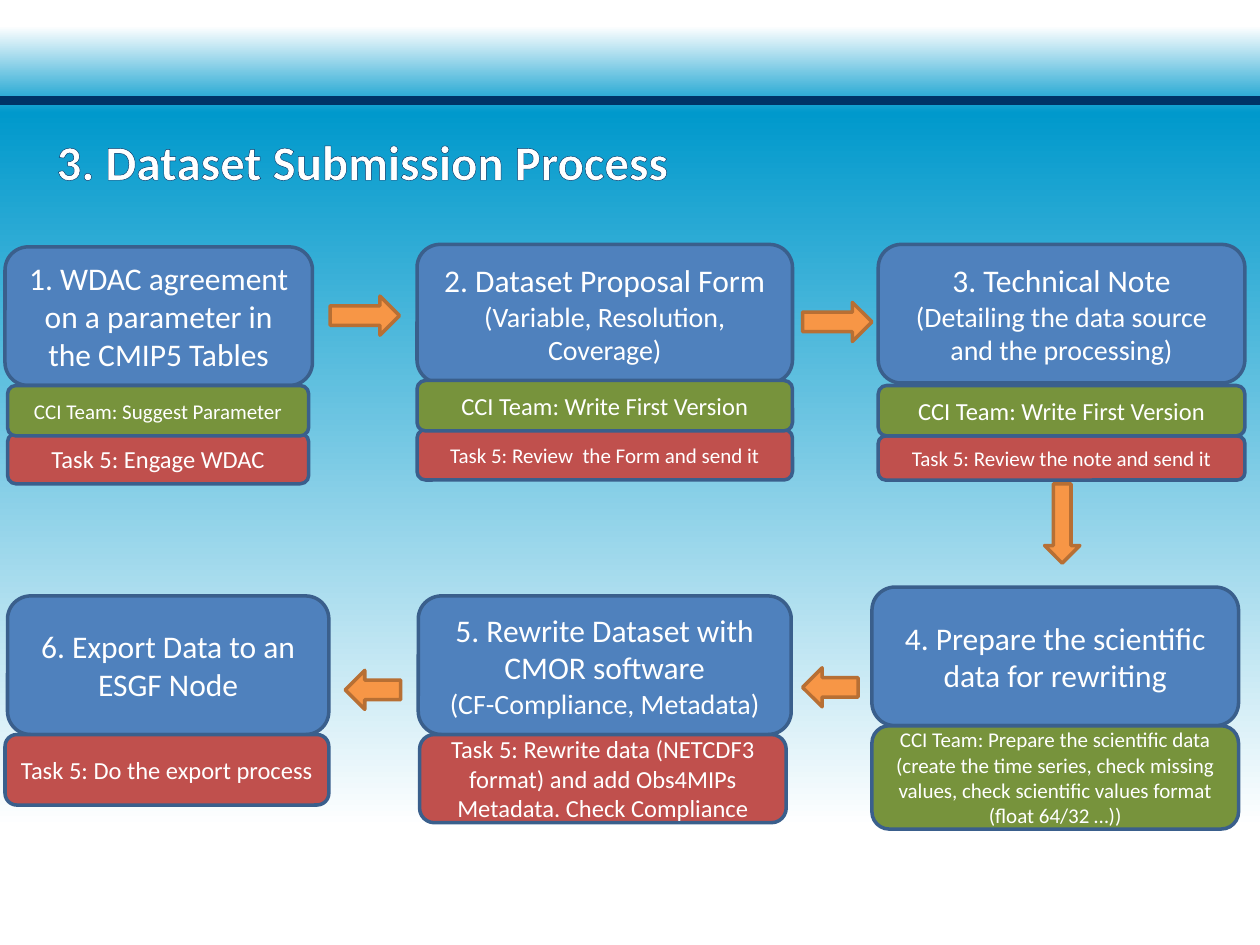
from copy import deepcopy
from dataclasses import dataclass

from lxml import etree
from pptx import Presentation
from pptx.dml.color import RGBColor
from pptx.enum.shapes import MSO_SHAPE
from pptx.enum.text import MSO_ANCHOR, PP_ALIGN
from pptx.oxml.ns import qn
from pptx.util import Inches, Pt

RECT, ROUND = MSO_SHAPE.RECTANGLE, MSO_SHAPE.ROUNDED_RECTANGLE
RIGHT, DOWN = MSO_SHAPE.RIGHT_ARROW, MSO_SHAPE.DOWN_ARROW
CENTER, MIDDLE = PP_ALIGN.CENTER, MSO_ANCHOR.MIDDLE

WHITE = RGBColor(0xFF, 0xFF, 0xFF)
SKY = RGBColor(0x00, 0x99, 0xCC)
NAVY = RGBColor(0x00, 0x33, 0x66)
BLUE = RGBColor(0x4F, 0x81, 0xBD)
BORDER = RGBColor(0x3A, 0x5F, 0x8C)
GREEN = RGBColor(0x77, 0x93, 0x3C)
RED = RGBColor(0xC0, 0x50, 0x4D)
ORANGE = RGBColor(0xF7, 0x96, 0x46)
RUST = RGBColor(0xB7, 0x6F, 0x34)

SKY_STOPS = [(0, WHITE), (5, WHITE), (88, SKY), (98, WHITE)]


@dataclass
class Task:
    """A coloured strip under a step."""
    text: str
    fill: RGBColor
    size: int
    top: float
    height: float = 0.4


@dataclass
class Step:
    """A process step with its tasks, listed back to front."""
    title: str
    left: float
    top: float
    width: float
    tasks: list[Task]
    task_left: float
    task_width: float
    detail: str = ""


@dataclass
class Arrow:
    """A block arrow between two steps."""
    left: float
    top: float
    width: float
    height: float = 0.31
    kind: int = RIGHT
    rotation: int = 0


STEPS = [
    Step("1. WDAC agreement on a parameter in the CMIP5 Tables", 0.04, 1.96, 2.44,
         [Task("Task 5: Engage WDAC", RED, 14, 3.44),
          Task("CCI Team: Suggest Parameter", GREEN, 12, 3.06)], 0.06, 2.39),
    Step("2. Dataset Proposal Form", 3.31, 1.94, 2.98,
         [Task("Task 5: Review  the Form and send it", RED, 12, 3.41),
          Task("CCI Team: Write First Version", GREEN, 14, 3.02)], 3.31, 2.98,
         "(Variable, Resolution, Coverage)"),
    Step("3. Technical Note", 6.97, 1.94, 2.91,
         [Task("Task 5: Review the note and send it", RED, 12, 3.46, 0.35),
          Task("CCI Team: Write First Version", GREEN, 14, 3.06)], 6.97, 2.91,
         "(Detailing the data source and the processing)"),
    Step("4. Prepare the scientific data for rewriting", 6.92, 4.66, 2.91,
         [Task("CCI Team: Prepare the scientific data (create the time series, "
               "check missing values, check scientific values format "
               "(float 64/32 …))", GREEN, 12, 5.76, 0.82)], 6.92, 2.91),
    Step("5. Rewrite Dataset with CMOR software", 3.32, 4.73, 2.96,
         [Task("Task 5: Rewrite data (NETCDF3 format) and add Obs4MIPs Metadata. "
               "Check Compliance", RED, 14, 5.83, 0.7)], 3.33, 2.91,
         "(CF-Compliance, Metadata)"),
    Step("6. Export Data to an ESGF Node", 0.06, 4.73, 2.55,
         [Task("Task 5: Do the export process", RED, 14, 5.83, 0.56)], 0.04, 2.57),
]

ARROWS = [
    Arrow(2.62, 2.35, 0.55),
    Arrow(6.37, 2.4, 0.55),
    Arrow(8.29, 3.84, 0.28, 0.63, DOWN),
    Arrow(6.37, 5.3, 0.44, rotation=180),
    Arrow(2.74, 5.32, 0.44, rotation=180),
]


def add_shape(s, kind: int, box: tuple, fill: RGBColor, line: RGBColor | None):
    """Add a flat preset shape with a solid fill and an optional border."""
    sp = s.shapes.add_shape(kind, *map(Inches, box))
    sp.shadow.inherit = False
    sp.fill.solid()
    sp.fill.fore_color.rgb = fill
    if line is None:
        sp.line.fill.background()
    else:
        sp.line.color.rgb = line
        sp.line.width = Pt(2)
    return sp


def write(sp, lines: list[tuple[str, int]], bold: bool = False) -> None:
    """Write centred white paragraphs, each with its own size."""
    tf = sp.text_frame
    for name, value in {"word_wrap": True, "vertical_anchor": MIDDLE}.items():
        setattr(tf, name, value)
    for i, (text, size) in enumerate(lines):
        p = tf.add_paragraph() if i else tf.paragraphs[0]
        p.alignment = CENTER
        r = p.add_run()
        r.text = text
        style = {"name": "Calibri", "size": Pt(size), "bold": bold}
        for name, value in style.items():
            setattr(r.font, name, value)
        r.font.color.rgb = WHITE


def add_backdrop(s) -> None:
    """Add the sky gradient and the navy rule."""
    sp = add_shape(s, RECT, (0, 0.07, 10, 6.84), WHITE, None)
    sp.fill.gradient()
    sp.fill.gradient_angle = 90
    stops = sp._element.spPr.find(qn("a:gradFill")).find(qn("a:gsLst"))
    first = stops[0]
    stops[:] = [deepcopy(first) for _ in SKY_STOPS]
    for stop, (position, color) in zip(sp.fill.gradient_stops, SKY_STOPS):
        stop.position = position / 100
        stop.color.rgb = color
    add_shape(s, RECT, (0, 0.78, 10, 0.04), NAVY, NAVY)


def add_title(s, text: str) -> None:
    """Add the outlined slide title."""
    sp = s.shapes.add_textbox(*map(Inches, (0, 0.84, 5.75, 0.87)))
    write(sp, [(text, 28)], bold=True)
    rpr = sp.text_frame.paragraphs[0].runs[0].font._element
    ln = etree.Element(qn("a:ln"), w=str(Pt(0.75)))
    fill = etree.SubElement(ln, qn("a:solidFill"))
    etree.SubElement(fill, qn("a:srgbClr"), val=str(NAVY))
    rpr.insert(0, ln)


def add_step(s, step: Step) -> None:
    """Add a step box and its task strips."""
    sp = add_shape(s, ROUND, (step.left, step.top, step.width, 1.1), BLUE, BORDER)
    write(sp, [(step.title, 18)] + ([(step.detail, 16)] if step.detail else []))
    for task in step.tasks:
        box = (step.task_left, task.top, step.task_width, task.height)
        write(add_shape(s, ROUND, box, task.fill, BORDER), [(task.text, task.size)])


def add_arrow(s, arrow: Arrow) -> None:
    """Add an orange block arrow."""
    box = (arrow.left, arrow.top, arrow.width, arrow.height)
    add_shape(s, arrow.kind, box, ORANGE, RUST).rotation = arrow.rotation


def main() -> None:
    """Build and save the slide."""
    prs = Presentation()
    prs.slide_width, prs.slide_height = Inches(10), Inches(7.5)
    s = prs.slides.add_slide(prs.slide_layouts[6])
    add_backdrop(s)
    add_title(s, "3. Dataset Submission Process")
    for step in STEPS:
        add_step(s, step)
    for arrow in ARROWS:
        add_arrow(s, arrow)
    prs.save("out.pptx")


if __name__ == "__main__":
    main()
